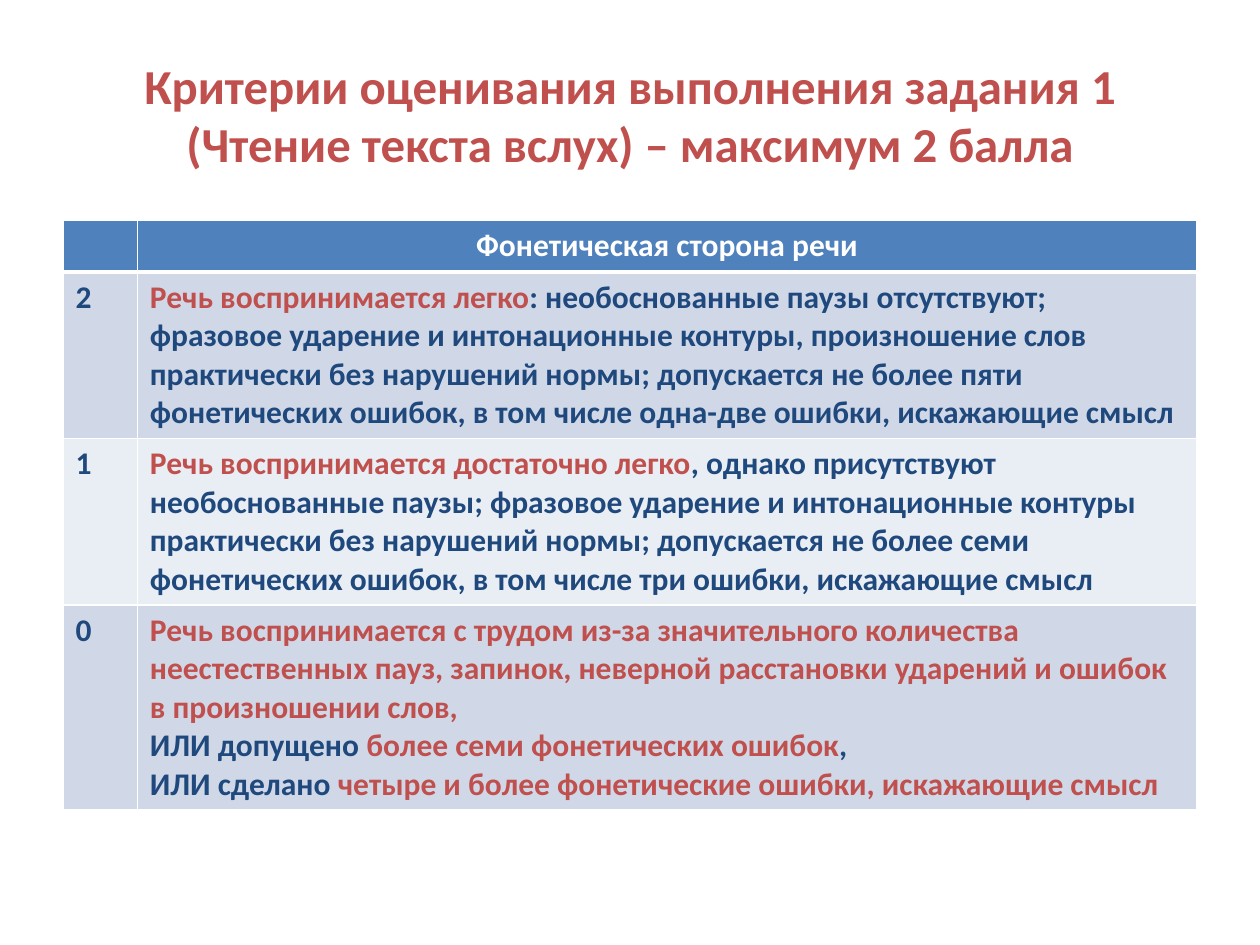
import pptx
import pptx.util
import pptx.dml.color
import pptx.enum.text
import pptx.oxml.ns
from lxml import etree

Inches, Pt = pptx.util.Inches, pptx.util.Pt
PP = pptx.enum.text.PP_ALIGN
RED, NAVY, WHITE = "C0504D", "1F497D", "FFFFFF"
HEAD, DARK, LIGHT = "4F81BD", "D0D8E8", "E9EDF4"

TITLE = ["Критерии оценивания выполнения задания 1",
         "(Чтение текста вслух) – максимум 2 балла"]

# Each cell is a list of paragraphs, each paragraph a list of (text, colour).
ROWS = [
    (0.41, HEAD, [], [[("Фонетическая сторона речи", WHITE)]]),
    (1.32, DARK, [[("2", NAVY)]], [[
        ("Речь воспринимается легко", RED),
        (": необоснованные паузы отсутствуют; фразовое ударение и интонационные "
         "контуры, произношение слов практически без нарушений нормы; допускается "
         "не более пяти фонетических ошибок, в том числе одна-две ошибки, "
         "искажающие смысл", NAVY)]]),
    (1.32, LIGHT, [[("1", NAVY)]], [[
        ("Речь воспринимается достаточно легко", RED),
        (", однако присутствуют необоснованные паузы; фразовое ударение и "
         "интонационные контуры практически без нарушений нормы; допускается "
         "не более семи фонетических ошибок, в том числе три ошибки, "
         "искажающие смысл", NAVY)]]),
    (1.59, DARK, [[("0", NAVY)]], [
        [("Речь воспринимается с трудом из-за значительного количества "
          "неестественных пауз, запинок, неверной расстановки ударений и ошибок "
          "в произношении слов,", RED)],
        [("ИЛИ допущено ", NAVY), ("более семи фонетических ошибок", RED), (",", NAVY)],
        [("ИЛИ сделано ", NAVY),
         ("четыре и более фонетические ошибки, искажающие смысл", RED)]]),
]


def rgb(code):
    return pptx.dml.color.RGBColor.from_string(code)


def style(font, size, color):
    for name, value in {"name": "Calibri", "size": Pt(size), "bold": True}.items():
        setattr(font, name, value)
    font.color.rgb = rgb(color)


def edge(cell, widths):
    """Draw white borders, with widths in points for left, right, top, bottom."""
    props = cell._tc.get_or_add_tcPr()
    for i, (side, width) in enumerate(zip("LRTB", widths)):
        line = etree.Element(pptx.oxml.ns.qn("a:ln" + side), w=str(Pt(width)))
        fill = etree.SubElement(line, pptx.oxml.ns.qn("a:solidFill"))
        etree.SubElement(fill, pptx.oxml.ns.qn("a:srgbClr"), val=WHITE)
        props.insert(i, line)


def write(cell, paras, align):
    frame = cell.text_frame
    for i, runs in enumerate(paras):
        para = frame.paragraphs[0] if i == 0 else frame.add_paragraph()
        para.alignment = align
        for text, color in runs:
            run = para.add_run()
            run.text = text
            style(run.font, 18, color)


def add_title(slide, left, top, width, height):
    title = slide.shapes.title
    box = {"left": left, "top": top, "width": width, "height": height}
    for name, value in box.items():
        setattr(title, name, Inches(value))
    frame = title.text_frame
    frame.text = "\v".join(TITLE)
    looks = {"word_wrap": True, "margin_bottom": Inches(0.2),
             "auto_size": pptx.enum.text.MSO_AUTO_SIZE.NONE,
             "vertical_anchor": pptx.enum.text.MSO_ANCHOR.MIDDLE}
    for name, value in looks.items():
        setattr(frame, name, value)
    para = frame.paragraphs[0]
    para.alignment = PP.CENTER
    for run in para.runs:
        style(run.font, 27.9, RED)


def add_grid(slide, left, top, width):
    height = sum(row[0] for row in ROWS)
    table = slide.shapes.add_table(
        len(ROWS), 2, Inches(left), Inches(top), Inches(width), Inches(height)).table
    mark = 0.59
    for column, size in zip(table.columns, (mark, width - mark)):
        column.width = Inches(size)
    for r, (tall, fill, *texts) in enumerate(ROWS):
        table.rows[r].height = Inches(tall)
        for c, paras in enumerate(texts):
            cell = table.cell(r, c)
            cell.fill.solid()
            cell.fill.fore_color.rgb = rgb(fill)
            edge(cell, (1, 1, 3 if r == 1 else 1, 3 if r == 0 else 1))
            write(cell, paras, PP.CENTER if r == 0 else PP.LEFT)


def main():
    deck = pptx.Presentation()
    deck.slide_width, deck.slide_height = Inches(10), Inches(7.5)
    slide = deck.slides.add_slide(deck.slide_layouts[5])
    add_title(slide, 0.5, 0.47, 9, 1.02)
    add_grid(slide, 0.5, 1.75, 9)
    deck.save("out.pptx")


if __name__ == "__main__":
    main()
